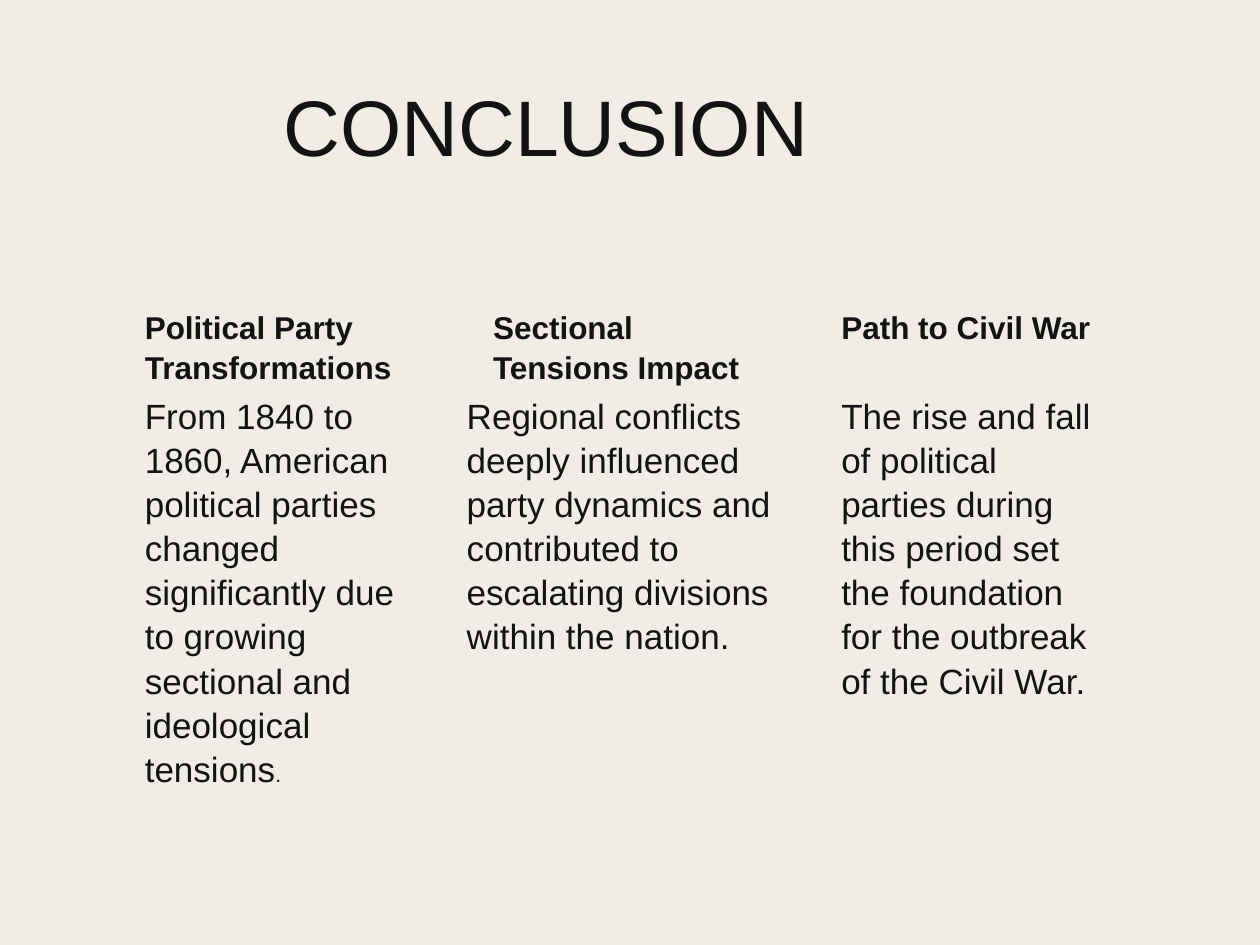
from dataclasses import dataclass

from pptx import Presentation
from pptx.dml.color import RGBColor
from pptx.enum.text import MSO_ANCHOR
from pptx.util import Cm, Pt


@dataclass(frozen=True)
class Theme:
    font: str = "Arial"
    paper: RGBColor = RGBColor(0xF0, 0xED, 0xE6)
    ink: RGBColor = RGBColor(0x13, 0x13, 0x13)
    title: int = 45
    heading: int = 18
    body: int = 20
    small: int = 12


theme = Theme()


def add_text(left, top, width, height, runs, spacing, bold=False):
    """Place one paragraph made of (text, size) runs; lengths in cm."""
    box = slide.shapes.add_textbox(Cm(left), Cm(top), Cm(width), Cm(height))
    frame = box.text_frame
    frame.word_wrap = True
    paragraph = frame.paragraphs[0]
    paragraph.line_spacing = spacing
    for text, size in runs:
        run = paragraph.add_run()
        run.text = text
        run.font.name = theme.font
        run.font.size = Pt(size)
        run.font.bold = bold
        run.font.color.rgb = theme.ink
    return frame


prs = Presentation()
prs.slide_width, prs.slide_height = Cm(25.4), Cm(19.05)
slide = prs.slides.add_slide(prs.slide_layouts[6])

# Background
slide.background.fill.solid()
slide.background.fill.fore_color.rgb = theme.paper

# Title
title = add_text(5.46, 1.27, 17.55, 2.36, [("CONCLUSION", theme.title)], 0.9)
title.vertical_anchor = MSO_ANCHOR.BOTTOM

# Three conclusions: heading, body runs, extra body width on each side
conclusions = [
    ("Political Party Transformations",
     [("From 1840 to 1860, American political parties changed significantly "
       "due to growing sectional and ideological tensions", theme.body),
      (".", theme.small)], 0),
    ("Sectional Tensions Impact",
     [("Regional conflicts deeply influenced party dynamics and contributed "
       "to escalating divisions within the nation.", theme.body)], 0.53),
    ("Path to Civil War",
     [("The rise and fall of political parties during this period set the "
       "foundation for the outbreak of the Civil War.", theme.body)], 0),
]
first_left, pitch, column_width = 2.54, 7.02, 5.92
heading_top, heading_height, body_height = 6.1, 1.73, 2.08

for index, (heading, body, overhang) in enumerate(conclusions):
    left = first_left + index * pitch
    heading_frame = add_text(left, heading_top, column_width, heading_height,
                             [(heading, theme.heading)], 1.05, bold=True)
    body_frame = add_text(left - overhang, heading_top + heading_height,
                          column_width + 2 * overhang, body_height, body, 1.05)
    for frame in (heading_frame, body_frame):
        frame.margin_left = Cm(0.38)
        frame.margin_top = frame.margin_right = frame.margin_bottom = Cm(0.08)

prs.save("out.pptx")
